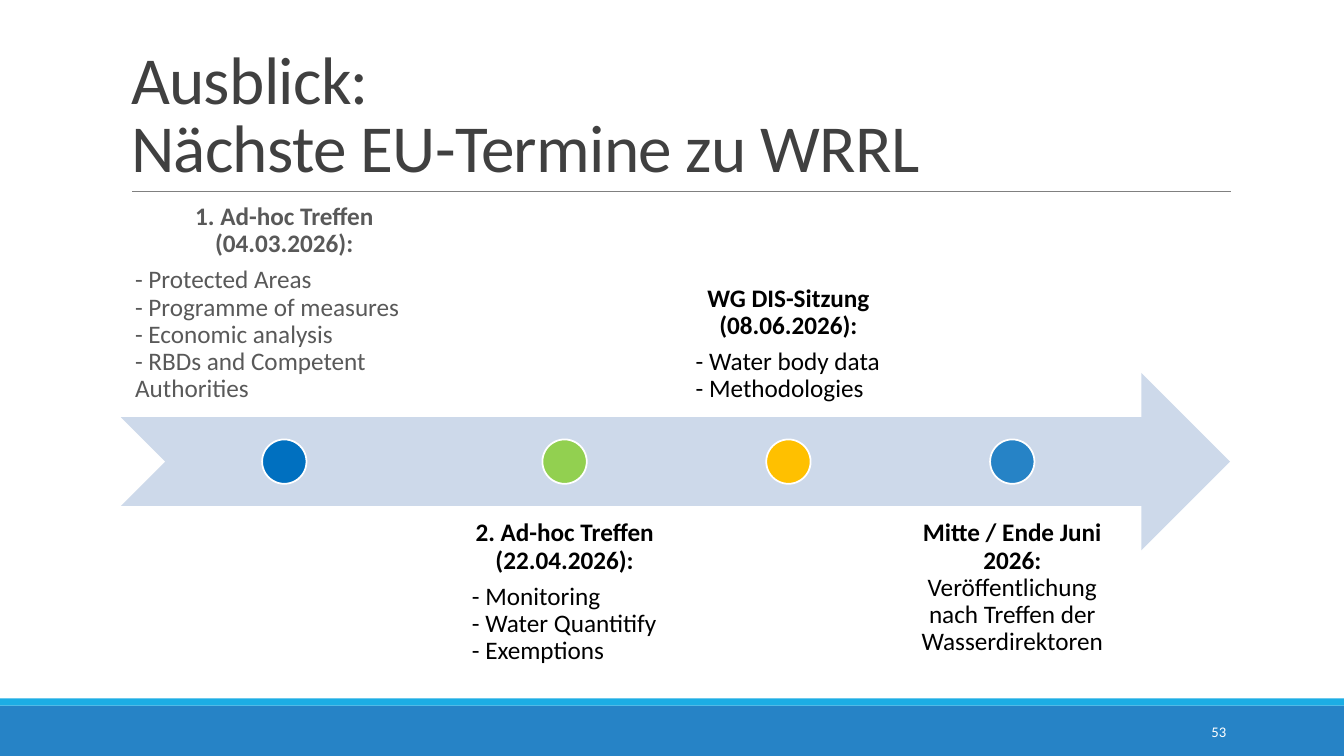
from pptx import Presentation
from pptx import util as u
from pptx.dml.color import RGBColor
from pptx.enum import shapes, text
from lxml import etree

WIDTH, HEIGHT = 13.33, 7.5
LEFT, SPAN = 1.2, 11
ARROW_TOP, BAND = 3.7, 1.76
DOT, GAP, INSET = 0.44, 0.1, 0.14


def paint(colour_format, colour):
    colour_format.rgb = RGBColor.from_string(colour)


def style(paragraph, size, colour, bold=False):
    for run in paragraph.runs:
        run.font.name = "Calibri"
        run.font.size = u.Pt(size)
        run.font.bold = bold
        paint(run.font.color, colour)


prs = Presentation()
prs.slide_width, prs.slide_height = u.Inches(WIDTH), u.Inches(HEIGHT)
slide = prs.slides.add_slide(prs.slide_layouts[5])

title = slide.shapes.title
title.left, title.top = u.Inches(LEFT), u.Inches(0.31)
title.width, title.height = u.Inches(SPAN), u.Inches(1.59)
heading = title.text_frame
heading.text = "Ausblick:\vNächste EU-Termine zu WRRL"
heading.vertical_anchor = text.MSO_ANCHOR.BOTTOM
heading.auto_size = text.MSO_AUTO_SIZE.NONE
heading.paragraphs[0].alignment = text.PP_ALIGN.LEFT
heading.paragraphs[0].line_spacing = 0.85
style(heading.paragraphs[0], 48, "404040")
for run in heading.paragraphs[0].runs:
    run.font._element.set("spc", "-50")

rule = slide.shapes.add_connector(
    shapes.MSO_CONNECTOR.STRAIGHT,
    u.Inches(1.31), u.Inches(1.9), u.Inches(12.21), u.Inches(1.9))
paint(rule.line.fill.fore_color if rule.line.fill.solid() else rule.line.color, "808080")
rule.line.width = u.Pt(0.5)
etree.SubElement(
    rule._element.spPr,
    "{http://schemas.openxmlformats.org/drawingml/2006/main}effectLst")

milestones = [
    (3.24, "0070C0", "595959", "1. Ad-hoc Treffen (04.03.2026):",
     "- Protected Areas\v- Programme of measures\v- Economic analysis\v"
     "- RBDs and Competent Authorities"),
    (2.12, "92D050", "000000", "2. Ad-hoc Treffen (22.04.2026):",
     "- Monitoring\v- Water Quantitify\v- Exemptions"),
    (2.12, "FFC000", "000000", "WG DIS-Sitzung (08.06.2026):",
     "- Water body data\v- Methodologies"),
    (2.12, "2683C6", "000000", "Mitte / Ende Juni 2026:",
     "Veröffentlichung nach Treffen der Wasserdirektoren"),
]

kinds = shapes.MSO_SHAPE
figures = [
    (kinds.RECTANGLE, 0, 7, WIDTH, 0.5, "2683C6"),
    (kinds.RECTANGLE, 0, 6.93, WIDTH, 0.07, "1CADE4"),
    (kinds.NOTCHED_RIGHT_ARROW, LEFT, ARROW_TOP, SPAN, BAND, "CDD9EA"),
]
column = LEFT
for width, dot_colour, *_ in milestones:
    figures.append((kinds.OVAL, column + (width - DOT) / 2,
                    ARROW_TOP + (BAND - DOT) / 2, DOT, DOT, dot_colour))
    column += width + GAP

for kind, x, y, width, height, colour in figures:
    figure = slide.shapes.add_shape(
        kind, u.Inches(x), u.Inches(y), u.Inches(width), u.Inches(height))
    figure.shadow.inherit = False
    figure.fill.solid()
    paint(figure.fill.fore_color, colour)
    if kind == kinds.OVAL:
        paint(figure.line.color, "FFFFFF")
        figure.line.width = u.Pt(1.25)
    else:
        figure.line.fill.background()

column = LEFT
for index, (width, _, colour, meeting, topics) in enumerate(milestones):
    above = index % 2 == 0
    top = 2.38 if above else 5.02
    label = slide.shapes.add_textbox(
        u.Inches(column), u.Inches(top), u.Inches(width), u.Inches(BAND)).text_frame
    label.word_wrap = True
    label.vertical_anchor = text.MSO_ANCHOR.BOTTOM if above else text.MSO_ANCHOR.TOP
    label.margin_left = label.margin_right = u.Inches(INSET)
    label.margin_top = label.margin_bottom = u.Inches(INSET)
    listed = topics.startswith("-")
    label.text = meeting + "\n" + topics
    date, agenda = label.paragraphs
    date.alignment = text.PP_ALIGN.CENTER
    agenda.alignment = text.PP_ALIGN.LEFT if listed else text.PP_ALIGN.CENTER
    date.space_after = u.Pt(6.3 if listed else 0)
    date.line_spacing = agenda.line_spacing = 0.9
    style(date, 18, colour, True)
    style(agenda, 18, colour)
    column += width + GAP

number = slide.shapes.add_textbox(
    u.Inches(10.83), u.Inches(7.06), u.Inches(1.43), u.Inches(0.4)).text_frame
number.word_wrap = True
number.vertical_anchor = text.MSO_ANCHOR.MIDDLE
number.text = "53"
number.paragraphs[0].alignment = text.PP_ALIGN.RIGHT
style(number.paragraphs[0], 10.5, "FFFFFF")

prs.save("out.pptx")
